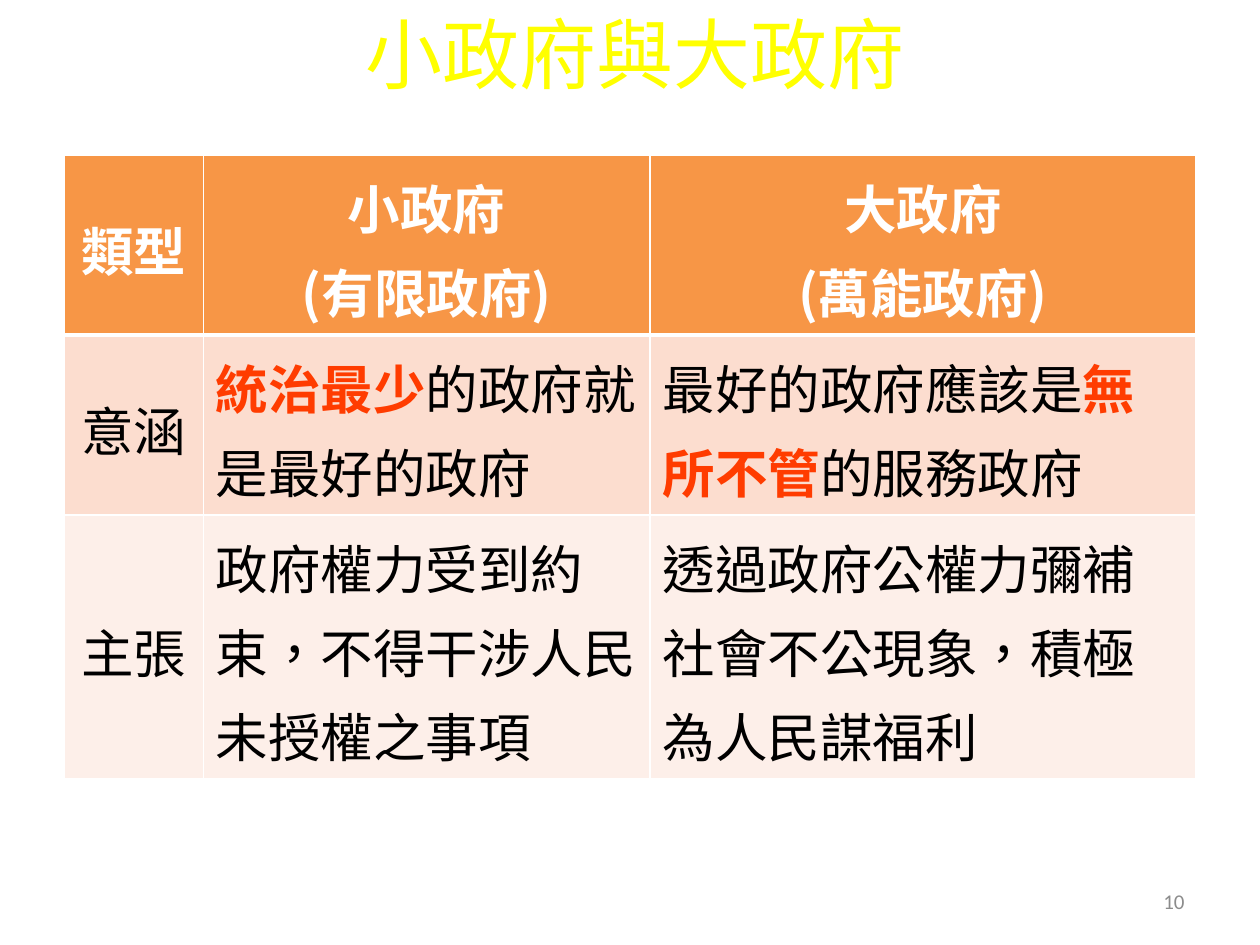
"""Build a slide with a table comparing small and big government."""
from lxml import etree
from pptx import Presentation
from pptx.dml.color import RGBColor
from pptx.enum.text import MSO_ANCHOR, PP_ALIGN
from pptx.oxml.ns import qn
from pptx.util import Pt

MIDDLE, TOP = MSO_ANCHOR.MIDDLE, MSO_ANCHOR.TOP
LEFT, CENTER, RIGHT = PP_ALIGN.LEFT, PP_ALIGN.CENTER, PP_ALIGN.RIGHT
CJK_FONT = "Noto Sans CJK SC"
RED = "FF3C00"


def color(hex_string):
    return RGBColor.from_string(hex_string)


def add_border(cell, side, width):
    line = etree.SubElement(cell._tc.get_or_add_tcPr(), qn("a:" + side), w=str(Pt(width)))
    fill = etree.SubElement(line, qn("a:solidFill"))
    etree.SubElement(fill, qn("a:srgbClr"), val="FFFFFF")


prs = Presentation()
prs.slide_width, prs.slide_height = Pt(720), Pt(540)
slide = prs.slides.add_slide(prs.slide_layouts[5])

title = slide.shapes.title
title.left, title.top, title.width, title.height = Pt(201.6), Pt(0), Pt(414), Pt(60.5)
title.text_frame.text = "小政府與大政府"
title.text_frame.vertical_anchor = MIDDLE
heading = title.text_frame.paragraphs[0]
heading.alignment = LEFT
heading.font.name, heading.font.size = "Calibri", Pt(44)
heading.font.color.rgb = color("FFFF00")

rows = [
    [["類型"], ["小政府", "(有限政府)"], ["大政府", "(萬能政府)"]],
    [["意涵"], ["*統治最少*的政府就是最好的政府"], ["最好的政府應該是*無所不管*的服務政府"]],
    [["主張"], ["政府權力受到約束，不得干涉人民未授權之事項"],
     ["透過政府公權力彌補社會不公現象，積極為人民謀福利"]],
]
row_fills = ["F79646", "FCDDCF", "FDEFE9"]
row_heights = [102.5, 102.5, 150]
column_widths = [79.5, 255.3, 311.8]

comparison = slide.shapes.add_table(
    3, 3, Pt(36.7), Pt(88.6), Pt(sum(column_widths)), Pt(sum(row_heights))).table
for column, width in zip(comparison.columns, column_widths):
    column.width = Pt(width)

for r, row in enumerate(rows):
    comparison.rows[r].height = Pt(row_heights[r])
    for c, lines in enumerate(row):
        cell = comparison.cell(r, c)
        cell.vertical_anchor = TOP if r == 1 and c > 0 else MIDDLE
        for side, width in (("lnL", 1), ("lnR", 1), ("lnT", 3 if r == 1 else 1),
                            ("lnB", 3 if r == 0 else 1)):
            add_border(cell, side, width)
        cell.fill.solid()
        cell.fill.fore_color.rgb = color(row_fills[r])
        for i, line in enumerate(lines):
            paragraph = cell.text_frame.paragraphs[0] if i == 0 else cell.text_frame.add_paragraph()
            paragraph.alignment = CENTER if r == 0 or c == 0 else LEFT
            paragraph.line_spacing = 1.1
            paragraph.font.name, paragraph.font.size = CJK_FONT, Pt(30)
            paragraph.font.bold = r == 0
            paragraph.font.color.rgb = color("FFFFFF" if r == 0 else "000000")
            properties = paragraph._p.pPr
            properties.set("hangingPunct", "0")
            properties.find(qn("a:defRPr")).find(qn("a:latin")).addnext(
                etree.Element(qn("a:ea"), typeface=CJK_FONT))
            for part, text in enumerate(line.split("*")):
                if text:
                    run = paragraph.add_run()
                    run.text = text
                    run._r.get_or_add_rPr().set("lang", "zh-TW")
                    if part % 2:
                        run.font.bold = True
                        run.font.color.rgb = color(RED)

page_number = slide.shapes.add_textbox(Pt(516), Pt(500.5), Pt(168), Pt(28.8)).text_frame
page_number.word_wrap = True
page_number.vertical_anchor = MIDDLE
page_number.text = "10"
number = page_number.paragraphs[0]
number.alignment = RIGHT
number.font.name, number.font.size = "Calibri", Pt(12)
number.font.color.rgb = color("8C8C8C")

prs.save("out.pptx")
